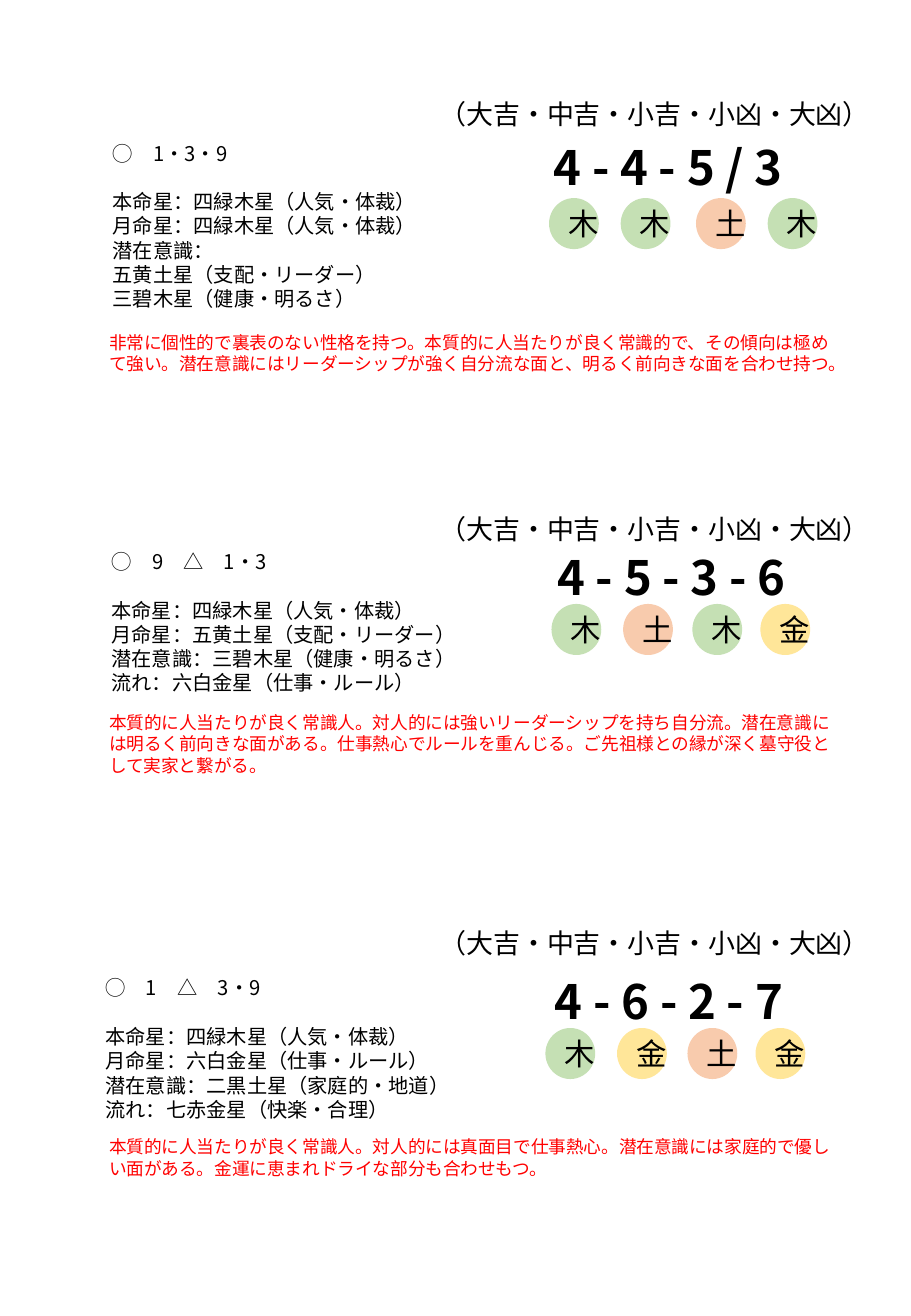
import lxml.etree
import pptx
import pptx.dml.color
import pptx.enum.shapes
import pptx.enum.text
import pptx.oxml.ns
import pptx.util

PX = 9144  # EMU, 100 px to the inch
FONT = "Noto Sans CJK JP"
LUCK = "（大吉・中吉・小吉・小凶・大凶）"
FILLS = {"木": "C5E0B4", "土": "F8CBAD", "金": "FFE699"}

# Boxes are left, top, width, height in px.
READINGS = [
    {
        "luck": (352, 75, 379, 37),
        "stars": (83, 111, 330, 151),
        "lines": ["◯　1・3・9", "本命星：四緑木星（人気・体裁）",
                  "月命星：四緑木星（人気・体裁）", "潜在意識：",
                  "五黄土星（支配・リーダー）", "三碧木星（健康・明るさ）"],
        "code": (446, 109, 252, 57), "digits": "4 - 4 - 5 / 3",
        "signs": "木木土木", "lefts": [452, 511, 573, 632], "row": 163,
        "note": (80, 268, 626, 45),
        "text": "非常に個性的で裏表のない性格を持つ。本質的に人当たりが良く常識的で、"
                "その傾向は極めて強い。潜在意識にはリーダーシップが強く自分流な面と、"
                "明るく前向きな面を合わせ持つ。",
    },
    {
        "luck": (352, 417, 379, 37),
        "stars": (82, 447, 343, 151),
        "lines": ["◯　9　△　1・3", "本命星：四緑木星（人気・体裁）",
                  "月命星：五黄土星（支配・リーダー）",
                  "潜在意識：三碧木星（健康・明るさ）",
                  "流れ：六白金星（仕事・ルール）"],
        "code": (449, 446, 252, 57), "digits": "4 - 5 - 3 - 6",
        "signs": "木土木金", "lefts": [454, 513, 570, 626], "row": 497,
        "note": (80, 581, 626, 63),
        "text": "本質的に人当たりが良く常識人。対人的には強いリーダーシップを持ち自分流。"
                "潜在意識には明るく前向きな面がある。仕事熱心でルールを重んじる。"
                "ご先祖様との縁が深く墓守役として実家と繋がる。",
    },
    {
        "luck": (352, 758, 379, 37),
        "stars": (77, 798, 312, 131),
        "lines": ["◯　1　△　3・9", "本命星：四緑木星（人気・体裁）",
                  "月命星：六白金星（仕事・ルール）",
                  "潜在意識：二黒土星（家庭的・地道）",
                  "流れ：七赤金星（快楽・合理）"],
        "code": (447, 795, 252, 57), "digits": "4 - 6 - 2 - 7",
        "signs": "木金土金", "lefts": [449, 508, 566, 622], "row": 846,
        "note": (80, 930, 626, 45),
        "text": "本質的に人当たりが良く常識人。対人的には真面目で仕事熱心。"
                "潜在意識には家庭的で優しい面がある。"
                "金運に恵まれドライな部分も合わせもつ。",
    },
]


def color(code):
    return pptx.dml.color.RGBColor.from_string(code)


def emu(box):
    return [n * PX for n in box]


class Page:
    def __init__(self, slide):
        self.slide = slide
        self.group()

    def group(self):
        """Start a new group that takes the elements that follow."""
        self.shapes = self.slide.shapes.add_group_shape().shapes

    def style(self, frame, size, ink="000000", bold=False):
        for para in frame.paragraphs:
            para.line_spacing = pptx.util.Pt(size * 1.2)
            for run in para.runs:
                font = run.font
                font.size = pptx.util.Pt(size)
                font.bold = bold
                font.color.rgb = color(ink)
                font.name = FONT
                # East Asian glyphs need their own typeface entry
                tag = pptx.oxml.ns.qn("a:ea")
                props = run._r.get_or_add_rPr()
                lxml.etree.SubElement(props, tag, typeface=FONT)

    def text(self, box, words, size, ink="000000", bold=False, wrap=True):
        frame = self.shapes.add_textbox(*emu(box)).text_frame
        frame.word_wrap = wrap
        frame.text = words
        self.style(frame, size, ink, bold)
        return frame

    def disc(self, left, top, sign):
        kind = pptx.enum.shapes.MSO_SHAPE.OVAL
        disc = self.shapes.add_shape(kind, *emu((left, top, 41, 42)))
        disc.shadow.inherit = False
        disc.fill.solid()
        disc.fill.fore_color.rgb = color(FILLS[sign])
        disc.line.fill.background()
        frame = disc.text_frame
        frame.word_wrap = True
        frame.vertical_anchor = pptx.enum.text.MSO_ANCHOR.MIDDLE
        frame.text = sign
        frame.paragraphs[0].alignment = pptx.enum.text.PP_ALIGN.CENTER
        self.style(frame, 18)

    def reading(self, data):
        self.text(data["luck"], LUCK, 16, wrap=False)
        stars = self.text(data["stars"], "\n".join(data["lines"]), 12)
        stars.paragraphs[0].space_after = pptx.util.Pt(14.4)
        self.text(data["code"], data["digits"], 28, bold=True)
        for left, sign in zip(data["lefts"], data["signs"]):
            self.disc(left, data["row"], sign)
        self.text(data["note"], data["text"], 10.5, ink="FF0000")


def main():
    deck = pptx.Presentation()
    deck.slide_width, deck.slide_height = emu((750, 1083))
    page = Page(deck.slides.add_slide(deck.slide_layouts[6]))
    for i, data in enumerate(READINGS):
        if i:
            page.group()
        page.reading(data)
    deck.save("out.pptx")


if __name__ == "__main__":
    main()
